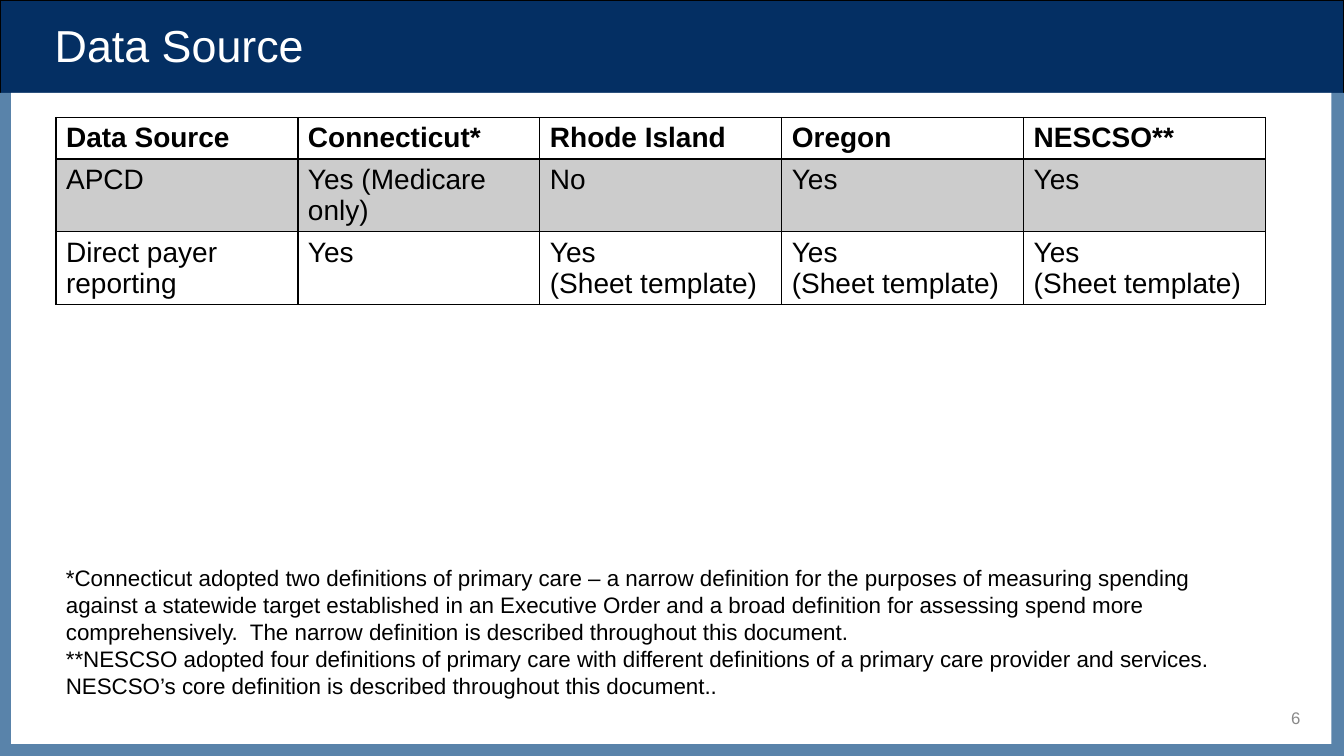
from dataclasses import dataclass

from lxml.etree import SubElement
from pptx import Presentation
from pptx.dml.color import RGBColor as RGB
from pptx.enum.shapes import MSO_SHAPE as Shape
from pptx.enum.text import MSO_ANCHOR as Anchor, MSO_AUTO_SIZE as AutoSize, PP_ALIGN as Align
from pptx.oxml.ns import qn
from pptx.util import Pt


@dataclass(frozen=True)
class Theme:
    font: str = "Arial"
    navy: str = "042F63"
    steel: str = "5983AA"
    white: str = "FFFFFF"
    black: str = "000000"
    gray: str = "898989"
    title: int = 32
    table: int = 20
    note: int = 16
    number: int = 12
    band_alpha: int = 20


class Deck:
    def __init__(self, prs, theme):
        self.theme = theme
        self.s = prs.slides.add_slide(prs.slide_layouts[6])

    def rect(self, box, fill, line=None):
        sp = self.s.shapes.add_shape(Shape.RECTANGLE, *map(Pt, box))
        sp.shadow.inherit = False
        sp.fill.solid()
        sp.fill.fore_color.rgb = RGB.from_string(fill)
        if line:
            sp.line.color.rgb = RGB.from_string(line)
            sp.line.width = Pt(0.75)
        else:
            sp.line.fill.background()

    def add_runs(self, tf, paragraphs, size, color, bold=False, align=Align.LEFT):
        for i, text in enumerate(paragraphs):
            p = tf.paragraphs[0] if i == 0 else tf.add_paragraph()
            p.alignment = align
            r = p.add_run()
            r.text = text
            r.font.name = self.theme.font
            r.font.size = Pt(size)
            r.font.bold = bold
            r.font.color.rgb = RGB.from_string(color)

    def text(self, box, paragraphs, size, color, align=Align.LEFT,
             anchor=Anchor.MIDDLE, grow=False):
        tf = self.s.shapes.add_textbox(*map(Pt, box)).text_frame
        tf.word_wrap = True
        tf.vertical_anchor = anchor
        tf.auto_size = AutoSize.SHAPE_TO_FIT_TEXT if grow else AutoSize.NONE
        self.add_runs(tf, paragraphs, size, color, align=align)

    def border(self, cell):
        tcPr = cell._tc.get_or_add_tcPr()
        for side in ("a:lnL", "a:lnR", "a:lnT", "a:lnB"):
            ln = SubElement(tcPr, qn(side), w=str(Pt(1)))
            fill = SubElement(ln, qn("a:solidFill"))
            SubElement(fill, qn("a:srgbClr"), val=self.theme.black)

    def band(self, cell):
        cell.fill.solid()
        cell.fill.fore_color.rgb = RGB.from_string(self.theme.black)
        color = cell._tc.tcPr.find(qn("a:solidFill"))[0]
        SubElement(color, qn("a:alpha"), val=str(self.theme.band_alpha * 1000))

    def table(self, left, top, col_width, row_heights, rows):
        t = self.theme
        cols = len(rows[0])
        box = (left, top, col_width * cols, sum(row_heights))
        table = self.s.shapes.add_table(len(rows), cols, *map(Pt, box)).table
        table.first_row = table.horz_banding = False
        for col in table.columns:
            col.width = Pt(col_width)
        for i, (height, row) in enumerate(zip(row_heights, rows)):
            table.rows[i].height = Pt(height)
            for j, text in enumerate(row):
                cell = table.cell(i, j)
                self.add_runs(cell.text_frame, text.split("\n"), t.table, t.black, bold=i == 0)
                self.border(cell)
                if i % 2:
                    self.band(cell)
                else:
                    cell.fill.background()


def main():
    prs = Presentation()
    prs.slide_width, prs.slide_height = Pt(960), Pt(540)
    t = Theme()
    deck = Deck(prs, t)

    # Header band and frame
    deck.rect((0, 0, 960, 66.7), t.navy, t.black)
    deck.rect((0, 66.4, 962, 474.4), t.steel)
    deck.rect((8, 66.4, 943, 465), t.white)

    # Title and slide number
    deck.text((32, 6, 896, 52), ["Data Source"], t.title, t.white)
    deck.text((880, 504, 56, 18), ["6"], t.number, t.gray, Align.RIGHT)

    # Data sources by state
    template = "Yes\n(Sheet template)"
    deck.table(40, 84, 172.8, (29.5, 52, 52), [
        ["Data Source", "Connecticut*", "Rhode Island", "Oregon", "NESCSO**"],
        ["APCD", "Yes (Medicare only)", "No", "Yes", "Yes"],
        ["Direct payer reporting", "Yes", template, template, template],
    ])

    # Footnotes
    deck.text((40, 399.6, 864, 104.4), [
        "*Connecticut adopted two definitions of primary care – a narrow definition for the "
        "purposes of measuring spending against a statewide target established in an Executive "
        "Order and a broad definition for assessing spend more comprehensively.  The narrow "
        "definition is described throughout this document.",
        "**NESCSO adopted four definitions of primary care with different definitions of a "
        "primary care provider and services.  NESCSO’s core definition is described throughout "
        "this document..",
    ], t.note, t.black, anchor=Anchor.TOP, grow=True)

    prs.save("out.pptx")


if __name__ == "__main__":
    main()
